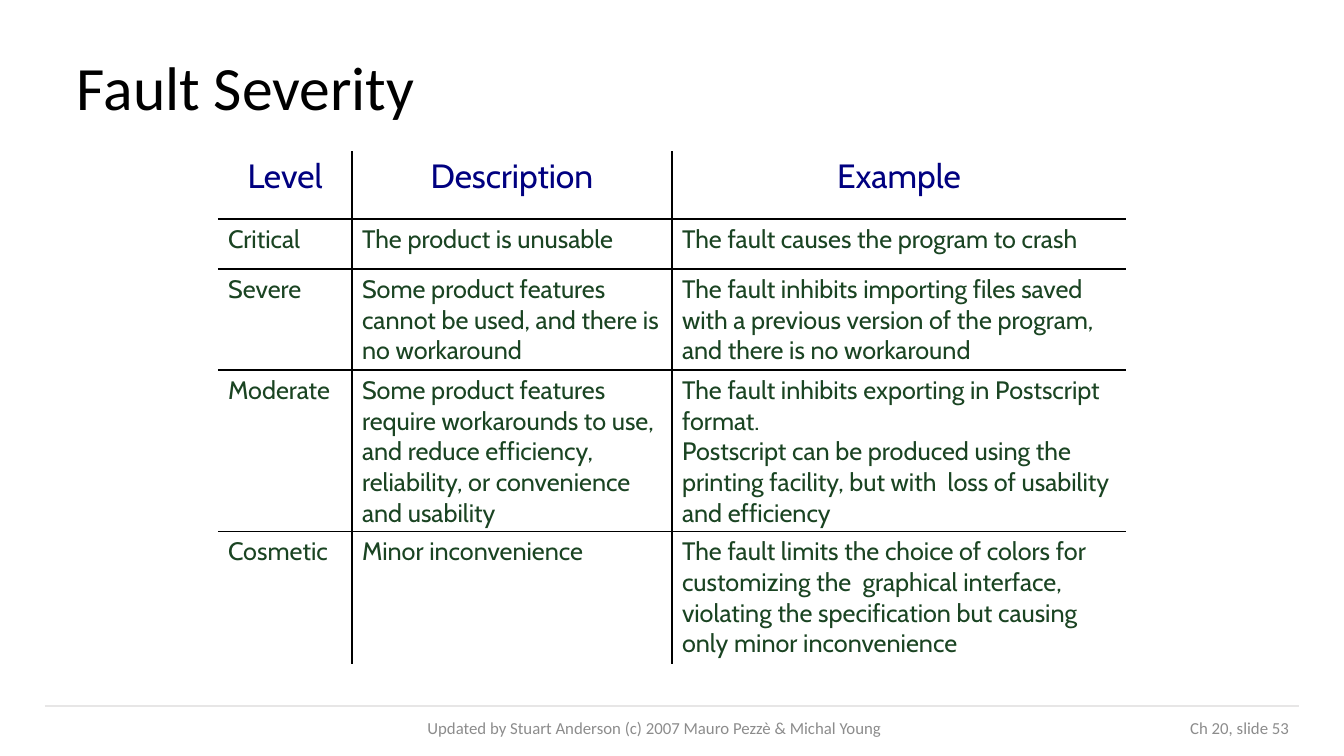
from lxml import etree
from pptx import Presentation
from pptx.dml.color import RGBColor
from pptx.enum.shapes import MSO_CONNECTOR
from pptx.enum.text import MSO_ANCHOR, PP_ALIGN
from pptx.oxml.ns import qn
from pptx.util import Pt

LEFT, CENTER, RIGHT = PP_ALIGN.LEFT, PP_ALIGN.CENTER, PP_ALIGN.RIGHT
MIDDLE = MSO_ANCHOR.MIDDLE
STRAIGHT = MSO_CONNECTOR.STRAIGHT

COLORS = {
    "title": "000000",
    "header": "000080",
    "body": "1A4422",
    "border": "000000",
    "footer": "8C8C8C",
    "rule": "E7E6E6",
}
TITLE = "Fault Severity"
CREDIT = "Updated by Stuart Anderson (c) 2007 Mauro Pezzè & Michal Young"
PAGE = "Ch 20, slide 53"
SEVERITIES = [
    ("Level", "Description", "Example"),
    ("Critical", "The product is unusable", "The fault causes the program to crash"),
    ("Severe",
     "Some product features cannot be used, and there is no workaround",
     "The fault inhibits importing files saved with a previous version of the program, "
     "and there is no workaround"),
    ("Moderate",
     "Some product features require workarounds to use, and reduce efficiency, "
     "reliability, or convenience and usability",
     "The fault inhibits exporting in Postscript format.\v"
     "Postscript can be produced using the printing facility, "
     "but with  loss of usability and efficiency"),
    ("Cosmetic", "Minor inconvenience",
     "The fault limits the choice of colors for customizing the  graphical interface, "
     "violating the specification but causing only minor inconvenience"),
]
COLUMN_WIDTHS = [134, 320, 454]
ROW_HEIGHTS = [68, 50, 101, 159, 133]
TABLE_LEFT, TABLE_TOP = 218, 151


def px(length):
    return round(length * 914400 / 100.8)


def write(text_frame, text, size, font, color, align):
    text_frame.text = text
    paragraph = text_frame.paragraphs[0]
    paragraph.alignment = align
    for run in paragraph.runs:
        run.font.size = Pt(size)
        run.font.name = font
        run.font.bold = False
        run.font.color.rgb = RGBColor.from_string(COLORS[color])
    return paragraph


def add_text(slide, box, text, size, color, align):
    shape = slide.shapes.add_textbox(*map(px, box))
    shape.text_frame.word_wrap = True
    shape.text_frame.vertical_anchor = MIDDLE
    return write(shape.text_frame, text, size, "Calibri", color, align)


def set_borders(cell, visible):
    """Draw the sides named in visible (L, R, T, B) and blank the others."""
    properties = cell._tc.get_or_add_tcPr()
    for index, side in enumerate("LRTB"):
        line = etree.Element(qn(f"a:ln{side}"), w=str(Pt(1)))
        if side in visible:
            fill = etree.SubElement(line, qn("a:solidFill"))
            etree.SubElement(fill, qn("a:srgbClr"), val=COLORS["border"])
        else:
            etree.SubElement(line, qn("a:noFill"))
        properties.insert(index, line)


def add_severity_table(slide):
    rows, columns = len(ROW_HEIGHTS), len(COLUMN_WIDTHS)
    table = slide.shapes.add_table(
        rows, columns, px(TABLE_LEFT), px(TABLE_TOP),
        px(sum(COLUMN_WIDTHS)), px(sum(ROW_HEIGHTS))).table
    table.first_row = table.horz_banding = False
    for column, width in zip(table.columns, COLUMN_WIDTHS):
        column.width = px(width)
    for row, height in zip(table.rows, ROW_HEIGHTS):
        row.height = px(height)
    for r, texts in enumerate(SEVERITIES):
        size, color, align = (18, "body", LEFT) if r else (24, "header", CENTER)
        for c, text in enumerate(texts):
            cell = table.cell(r, c)
            cell.fill.background()
            inner = {"L": c > 0, "R": c < columns - 1, "T": r > 0, "B": r < rows - 1}
            set_borders(cell, [side for side in inner if inner[side]])
            write(cell.text_frame, text, size, "Cabin", color, align)


def add_footer_rule(slide):
    rule = slide.shapes.add_connector(STRAIGHT, px(45), px(706), px(1299), px(706))
    rule.line.color.rgb = RGBColor.from_string(COLORS["rule"])
    rule.line.width = Pt(0.75)
    etree.SubElement(rule._element.spPr, qn("a:effectLst"))


def main():
    presentation = Presentation()
    presentation.slide_width, presentation.slide_height = px(1344), px(756)
    slide = presentation.slides.add_slide(presentation.slide_layouts[6])
    add_footer_rule(slide)
    title = add_text(slide, (67, 30, 1210, 121), TITLE, 44, "title", LEFT)
    title.line_spacing = 0.9
    add_severity_table(slide)
    add_text(slide, (402, 715, 505, 26), CREDIT, 12, "footer", CENTER)
    add_text(slide, (986, 715, 313, 26), PAGE, 12, "footer", RIGHT)
    presentation.save("out.pptx")


if __name__ == "__main__":
    main()
